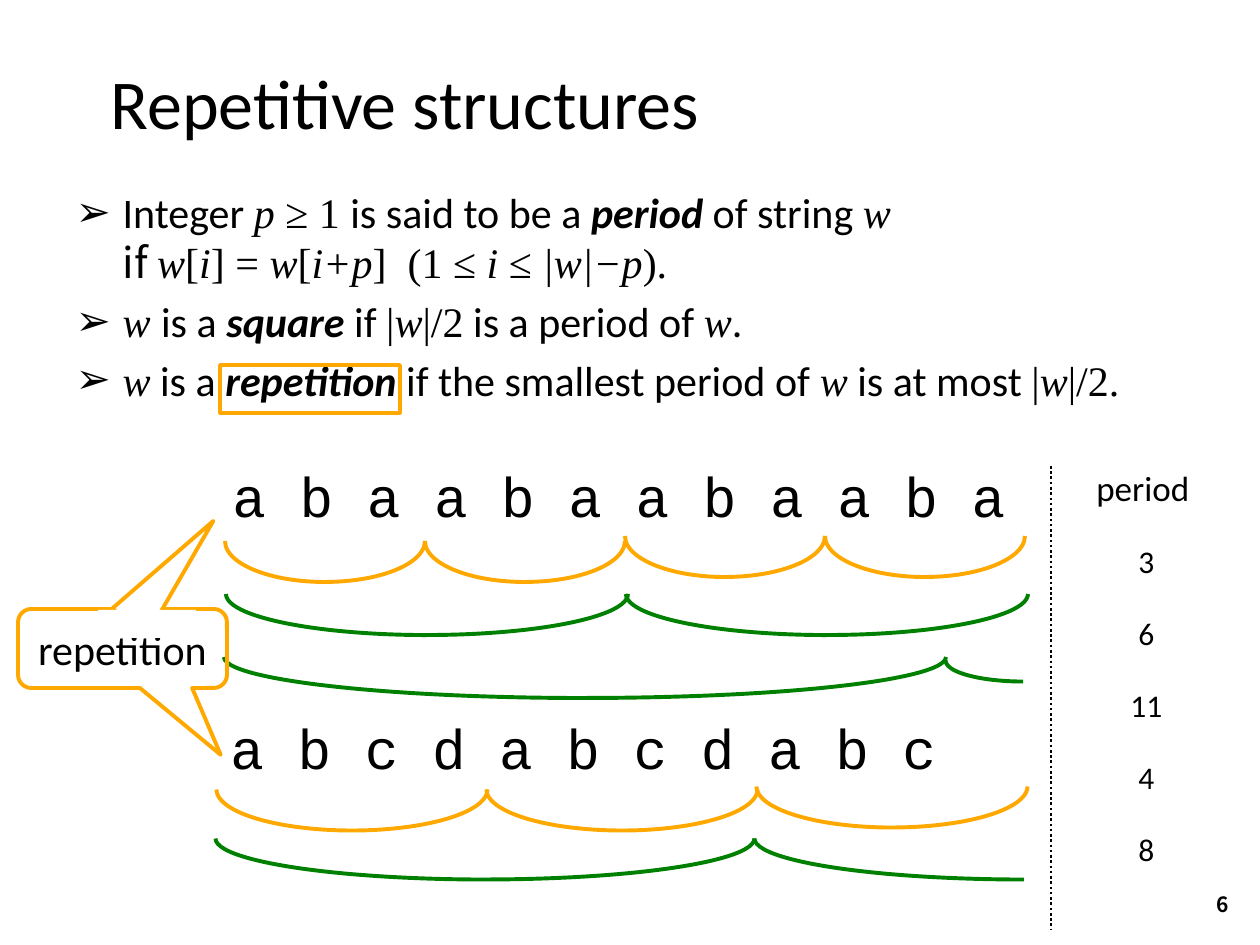
from lxml.etree import SubElement
from pptx import Presentation
from pptx.dml.color import RGBColor as RGB
from pptx.enum.dml import MSO_LINE as Dash
from pptx.enum.shapes import MSO_CONNECTOR as Conn, MSO_SHAPE as Form
from pptx.enum.text import MSO_ANCHOR as Anchor, MSO_AUTO_SIZE as Fit, PP_ALIGN as Align
from pptx.oxml.ns import qn
from pptx.util import Emu, Pt

SCALE = 7257  # EMU in one px, at 126 px to the inch
BLACK, WHITE, ORANGE, GREEN = "000000", "FFFFFF", "FFA900", "008000"
SANS, SERIF, MONO, CJK = "Calibri", "Times New Roman", "Courier New", "Noto Sans CJK JP"

FORMATS = {
    "sans": {"name": SANS},
    "term": {"name": SANS, "bold": True, "italic": True},
    "math": {"name": SERIF},
    "var": {"name": SERIF, "italic": True},
    "cjk": {"name": CJK},
}

POINTS = [
    [("sans", "Integer "), ("var", "p "), ("math", "≥ 1 "), ("sans", "is said to be a "),
     ("term", "period"), ("sans", " of string "), ("var", "w \n"), ("cjk", "if "),
     ("var", "w"), ("math", "["), ("var", "i"), ("math", "] = "), ("var", "w"),
     ("math", "["), ("var", "i+p"), ("math", "]  (1 ≤ "), ("var", "i "), ("math", "≤ "),
     ("var", "|w|−p"), ("math", ").")],
    [("var", "w "), ("sans", "is a "), ("term", "square"), ("sans", " if "), ("math", "|"),
     ("var", "w"), ("math", "|/2"), ("sans", " is a period of "), ("var", "w"),
     ("sans", ".")],
    [("var", "w"), ("sans", " is a "), ("term", "repetition"),
     ("sans", " if the smallest period of "), ("var", "w"), ("sans", " is at most "),
     ("math", "|"), ("var", "w"), ("math", "|/2.")],
]


def px(*vals):
    return [Emu(val * SCALE) for val in vals]


def hue(code):
    return RGB.from_string(code)


class Deck:
    def __init__(self):
        self.prs = Presentation()
        self.prs.slide_width, self.prs.slide_height = px(1260, 945)
        self.slide = self.prs.slides.add_slide(self.prs.slide_layouts[1])
        self.shapes = self.slide.shapes

    def style(self, font, size, form):
        font.size = Pt(size)
        font.color.rgb = hue(BLACK)
        for key, val in form.items():
            setattr(font, key, val)

    def place(self, shape, box):
        shape.left, shape.top, shape.width, shape.height = px(*box)

    def label(self, shape, text, size, face=SANS, align=Align.LEFT, bold=False):
        para = shape.text_frame.paragraphs[0]
        para.text, para.alignment = text, align
        self.style(para.runs[0].font, size, {"name": face, "bold": bold})

    def title(self, box, text):
        shape = self.shapes.title
        self.place(shape, box)
        shape.text_frame.auto_size = Fit.NONE
        shape.text_frame.vertical_anchor = Anchor.MIDDLE
        self.label(shape, text, 40)

    def points(self, box, rows):
        shape = self.slide.placeholders[1]
        self.place(shape, box)
        frame = shape.text_frame
        frame.auto_size = Fit.NONE
        for num, row in enumerate(rows):
            para = frame.add_paragraph() if num else frame.paragraphs[0]
            props = para._p.get_or_add_pPr()
            indent = px(47)[0]
            props.set("marL", str(indent))
            props.set("indent", str(-indent))
            SubElement(props, qn("a:buChar")).set("char", "➢")
            para.space_before = Pt(4.8 if num else 0)
            for kind, text in row:
                run = para.add_run()
                run.text = text.rstrip("\n")
                self.style(run.font, 24, FORMATS[kind])
                if text.endswith("\n"):
                    para.add_line_break()

    def text(self, box, text, size, wrap=True, anchor=Anchor.TOP, fit=Fit.SHAPE_TO_FIT_TEXT,
             **form):
        shape = self.shapes.add_textbox(*px(*box))
        frame = shape.text_frame
        frame.word_wrap, frame.auto_size, frame.vertical_anchor = wrap, fit, anchor
        self.label(shape, text, size, **form)

    def shape(self, form, box, line=None, width=2.25, fill=None, turn=0, adjust=()):
        shape = self.shapes.add_shape(form, *px(*box))
        shape.shadow.inherit = False
        shape.rotation = turn
        for num, val in enumerate(adjust):
            shape.adjustments[num] = val
        for paint, code in ((shape.fill, fill), (shape.line.fill, line)):
            if code:
                paint.solid()
                paint.fore_color.rgb = hue(code)
            else:
                paint.background()
        if line:
            shape.line.width = Pt(width)
        return shape

    def bowl(self, left, top, width, line, height=82, half=False):
        """Draw the lower half of an ellipse from two quarter arcs, or only its left one."""
        shift = (width - height) // 2
        box = (left + shift, top - shift, height, width)
        if not half:
            self.shape(Form.ARC, box, line, turn=90)
        arc = self.shape(Form.ARC, box, line, turn=90)
        arc._element.spPr.get_or_add_xfrm().set("flipV", "1")

    def dots(self, left, top, end):
        line = self.shapes.add_connector(Conn.STRAIGHT, *px(left, top, left, end))
        line.line.width = Pt(1.5)
        line.line.color.rgb = hue(BLACK)
        line.line.dash_style = Dash.ROUND_DOT
        SubElement(line._element.spPr, qn("a:effectLst"))

    def callout(self, box, text, adjust):
        shape = self.shape(Form.ROUNDED_RECTANGULAR_CALLOUT, box, ORANGE, adjust=adjust)
        shape.text_frame.vertical_anchor = Anchor.MIDDLE
        self.label(shape, text, 24, align=Align.CENTER)


def main():
    deck = Deck()
    deck.title((98, 38, 1099, 127), "Repetitive structures")
    deck.points((63, 180, 1162, 257), POINTS)
    deck.text((1155, 879, 86, 50), "6", 12, anchor=Anchor.MIDDLE, fit=Fit.NONE,
              face=CJK, align=Align.RIGHT, bold=True)

    # First string: periods 11, 3 and 6
    deck.bowl(224, 616, 722, GREEN)
    deck.bowl(946, 639, 155, GREEN, height=42, half=True)
    deck.text((220, 455, 840, 81), "a b a a b a a b a a b a", 32, face=MONO)
    for num in range(4):
        deck.bowl(225 + 200 * num, 500 if num < 2 else 495, 200, ORANGE)
    for left in (226, 626):
        deck.bowl(left, 553, 402, GREEN)

    # Second string: periods 8 and 4
    deck.bowl(216, 797, 539, GREEN)
    deck.bowl(755, 797, 539, GREEN, half=True)
    deck.text((218, 707, 805, 81), "a b c d a b c d a b c", 32, face=MONO)
    for num in range(3):
        deck.bowl(217 + 270 * num, 748 if num < 2 else 745, 271, ORANGE)

    # Callout with a second tail pointing up
    deck.callout((18, 609, 209, 79), "repetition", (0.47, 1.346, 0.167))
    deck.shape(Form.RECTANGLE, (220, 365, 180, 48), ORANGE, width=2)
    deck.shape(Form.ISOSCELES_TRIANGLE, (147, 504, 44, 131), ORANGE, fill=WHITE,
               turn=36.9, adjust=(0.643,))
    deck.shape(Form.RECTANGLE, (98, 610, 98, 28), fill=WHITE)

    # Column of periods
    deck.dots(1051, 466, 930)
    deck.text((1084, 460, 127, 55), "period", 20, wrap=False)
    for num, period in enumerate((3, 6, 11, 4, 8)):
        width = 42 if period < 10 else 58
        deck.text((1147 - width // 2, 536 + 72 * num, width, 50), str(period), 18, wrap=False)

    deck.prs.save("out.pptx")


if __name__ == "__main__":
    main()
